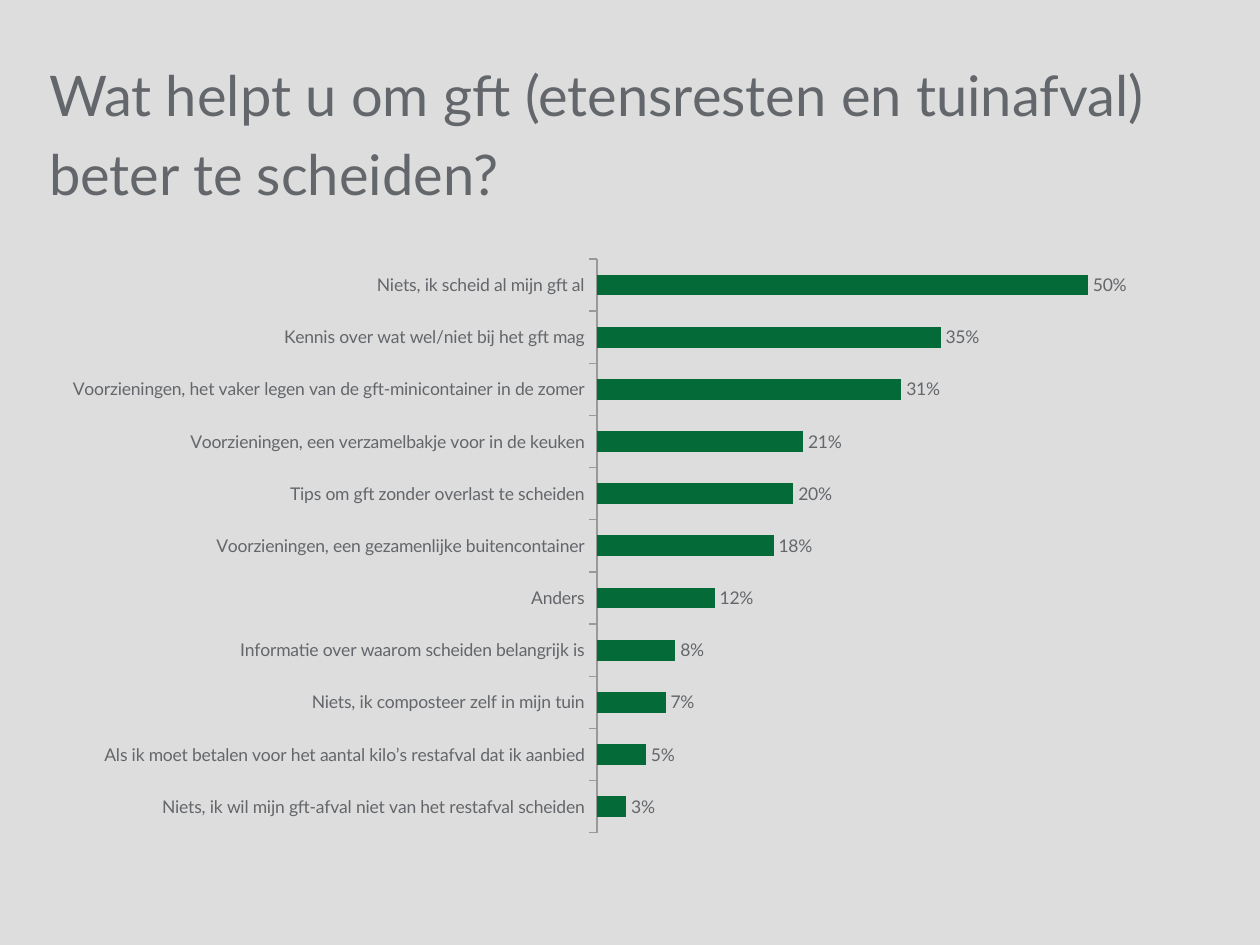
from dataclasses import dataclass
from typing import NamedTuple

from lxml.etree import SubElement
from pptx import Presentation
from pptx.chart.data import CategoryChartData
from pptx.dml.color import RGBColor
from pptx.enum.chart import (XL_CHART_TYPE, XL_LABEL_POSITION,
                             XL_TICK_LABEL_POSITION, XL_TICK_MARK)
from pptx.enum.text import MSO_ANCHOR
from pptx.oxml.ns import qn
from pptx.util import Inches, Pt


@dataclass(frozen=True)
class Theme:
    back: RGBColor = RGBColor(0xDD, 0xDD, 0xDD)
    text: RGBColor = RGBColor(0x63, 0x66, 0x6A)
    bar: RGBColor = RGBColor(0x04, 0x6A, 0x38)
    axis: RGBColor = RGBColor(0x99, 0x99, 0x99)
    face: str = "Lato"
    title: Pt = Pt(32)
    lead: Pt = Pt(45)
    label: Pt = Pt(10)


class Box(NamedTuple):
    left: float
    top: float
    width: float
    height: float

    def inches(self) -> list:
        return [Inches(side) for side in self]


class Answer(NamedTuple):
    label: str
    share: float


THEME = Theme()
TITLE = "Wat helpt u om gft (etensresten en tuinafval) beter te scheiden?"
ANSWERS = [
    Answer("Niets, ik scheid al mijn gft al", 0.50),
    Answer("Kennis over wat wel/niet bij het gft mag", 0.35),
    Answer("Voorzieningen, het vaker legen van de gft-minicontainer in de zomer", 0.31),
    Answer("Voorzieningen, een verzamelbakje voor in de keuken", 0.21),
    Answer("Tips om gft zonder overlast te scheiden", 0.20),
    Answer("Voorzieningen, een gezamenlijke buitencontainer", 0.18),
    Answer("Anders", 0.12),
    Answer("Informatie over waarom scheiden belangrijk is", 0.08),
    Answer("Niets, ik composteer zelf in mijn tuin", 0.07),
    Answer("Als ik moet betalen voor het aantal kilo’s restafval dat ik aanbied", 0.05),
    Answer("Niets, ik wil mijn gft-afval niet van het restafval scheiden", 0.03),
]


def set_font(font, size: Pt) -> None:
    font.name = THEME.face
    font.size = size
    font.color.rgb = THEME.text
    font.bold = False


def add_title(slide, text: str, box: Box) -> None:
    frame = slide.shapes.add_textbox(*box.inches()).text_frame
    frame.word_wrap = True
    frame.vertical_anchor = MSO_ANCHOR.TOP
    frame.margin_left = frame.margin_right = 0
    frame.margin_top = frame.margin_bottom = 0
    para = frame.paragraphs[0]
    para.text = text
    para.line_spacing = THEME.lead
    set_font(para.font, THEME.title)


def place_plot(chart, area: Box) -> None:
    """Fix the inner plot area, in fractions of the chart."""
    plot = chart.plots[0]._element.getparent()
    layout = plot.find(qn("c:layout"))
    if layout is None:
        layout = SubElement(plot, qn("c:layout"))
        plot.insert(0, layout)
    manual = SubElement(layout, qn("c:manualLayout"))
    rules = dict(layoutTarget="inner", xMode="edge", yMode="edge",
                 x=area.left, y=area.top, w=area.width, h=area.height)
    for tag, value in rules.items():
        SubElement(manual, qn(f"c:{tag}")).set("val", str(value))


def add_bars(slide, answers: list[Answer], box: Box) -> None:
    data = CategoryChartData(number_format="0%")
    data.categories = [answer.label for answer in answers]
    data.add_series("Series 1", [answer.share for answer in answers])
    chart = slide.shapes.add_chart(
        XL_CHART_TYPE.BAR_CLUSTERED, *box.inches(), data).chart
    chart.has_legend = False
    chart.has_title = False
    set_font(chart.font, THEME.label)
    place_plot(chart, Box(0.472, 0.018, 0.508, 0.961))

    # Axes
    cats = chart.category_axis
    cats.reverse_order = True
    cats.has_major_gridlines = False
    cats.major_tick_mark = XL_TICK_MARK.OUTSIDE
    cats.tick_label_position = XL_TICK_LABEL_POSITION.LOW
    cats.format.line.color.rgb = THEME.axis
    cats.format.line.width = Pt(0.75)
    vals = chart.value_axis
    vals.minimum_scale, vals.maximum_scale = 0, 0.6
    vals.has_major_gridlines = False
    vals.visible = False

    # Bars and their labels
    plot = chart.plots[0]
    plot.gap_width = 150
    plot.vary_by_categories = False
    fill = plot.series[0].format.fill
    fill.solid()
    fill.fore_color.rgb = THEME.bar
    plot.has_data_labels = True
    labels = plot.data_labels
    labels.show_value = True
    labels.number_format = "0%"
    labels.number_format_is_linked = False
    labels.position = XL_LABEL_POSITION.OUTSIDE_END
    set_font(labels.font, THEME.label)


def main() -> None:
    deck = Presentation()
    deck.slide_width, deck.slide_height = Inches(10), Inches(7.5)
    slide = deck.slides.add_slide(deck.slide_layouts[6])
    slide.background.fill.solid()
    slide.background.fill.fore_color.rgb = THEME.back
    add_title(slide, TITLE, Box(0.39, 0.39, 9.21, 1.18))
    add_bars(slide, ANSWERS, Box(0.39, 1.97, 9.21, 4.74))
    deck.save("out.pptx")


if __name__ == "__main__":
    main()
